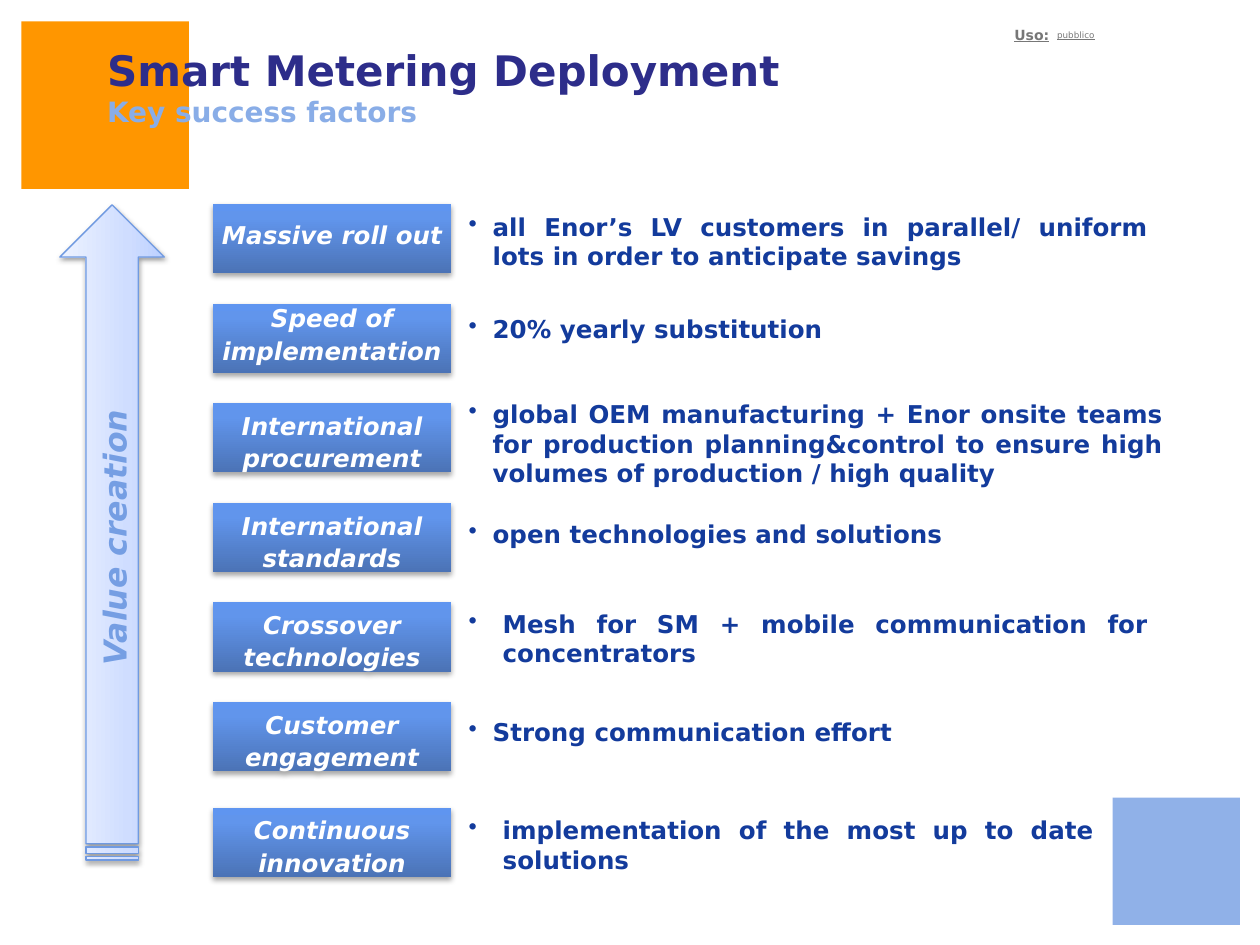
from lxml import etree
from pptx import Presentation
from pptx.dml.color import RGBColor
from pptx.enum import shapes, text
from pptx.oxml import ns
from pptx.util import Inches, Pt

FONT = "DejaVu Sans"
BOX_STOPS = [(0, "4B73B6"), (80, "6195EC"), (100, "5F95F0")]
ARROW_STOPS = [(0, "BCD0FF"), (35, "CFDDFF"), (100, "EDF2FF")]
LABEL_INSETS = (0.04, 0.04, 0.04, 0)
RAISED_INSETS = (0.04, 0, 0.04, 0.09)
BULLET_INSETS = (0.06, 0.06, 0.1, 0.06)
HEADER_INSETS = (0.11, 0.05, 0.11, 0.05)

# label, label insets, bullet text, bullet top, bullet width, hanging indent
FACTORS = [
    ("Massive roll out", RAISED_INSETS,
     "all Enor’s LV customers in parallel/ uniform lots in order to anticipate savings",
     1.62, 5.55, 0.19),
    ("Speed of implementation", RAISED_INSETS,
     "20% yearly substitution", 2.43, 5.55, 0.19),
    ("International procurement", LABEL_INSETS,
     "global OEM manufacturing + Enor onsite teams for production "
     "planning&control to ensure high volumes of production / high quality",
     3.11, 5.67, 0.19),
    ("International standards", LABEL_INSETS,
     "open technologies and solutions", 4.06, 5.55, 0.19),
    ("Crossover technologies", LABEL_INSETS,
     "Mesh for SM + mobile communication for concentrators", 4.77, 5.55, 0.27),
    ("Customer engagement", LABEL_INSETS,
     "Strong communication effort", 5.63, 5.55, 0.19),
    ("Continuous innovation", LABEL_INSETS,
     "implementation of the most up to date solutions", 6.41, 5.12, 0.27),
]
FIRST_TOP, PITCH, LAST_TOP = 1.62, 0.79, 6.41


def color(value):
    return RGBColor.from_string(value)


def sub(parent, tag, **attrs):
    return etree.SubElement(parent, ns.qn(tag), {k: str(v) for k, v in attrs.items()})


def setup_frame(sp, insets, anchor):
    tf = sp.text_frame
    tf.word_wrap = True
    tf.vertical_anchor = anchor
    (tf.margin_left, tf.margin_top,
     tf.margin_right, tf.margin_bottom) = map(Inches, insets)
    return tf


def write(p, content, size, fill, bold=True, italic=False, underline=False,
          align=None, spacing=None, hang=None):
    """Fill a paragraph; hang is the hanging indent of a bullet in inches."""
    if hang:
        pPr = p._p.get_or_add_pPr()
        pPr.set("marL", str(Inches(hang)))
        pPr.set("indent", str(-Inches(hang)))
        sub(pPr, "a:buChar", char="•")
    p.alignment = align
    if spacing:
        p.line_spacing = spacing
    r = p.add_run()
    r.text = content
    f = r.font
    f.name, f.size, f.color.rgb = FONT, Pt(size), color(fill)
    f.bold, f.italic, f.underline = bold, italic, underline


def add_text(s, at, insets, anchor=text.MSO_ANCHOR.TOP):
    return setup_frame(s.shapes.add_textbox(*map(Inches, at)), insets, anchor)


def add_shape(s, kind, at, fill=None, line=None):
    sp = s.shapes.add_shape(kind, *map(Inches, at))
    sp.shadow.inherit = False
    if fill:
        sp.fill.solid()
        sp.fill.fore_color.rgb = color(fill)
    if line:
        sp.line.color.rgb = color(line)
        sp.line.width = Pt(0.75)
    else:
        sp.line.fill.background()
    return sp


def add_gradient(sp, stops):
    """Run the colour stops from the bottom of the shape to its top."""
    sp.fill.gradient()
    sp.fill.gradient_angle = 90
    gs_list = sp._element.spPr.find(".//" + ns.qn("a:gsLst"))
    for old in list(gs_list):
        gs_list.remove(old)
    for pos, value in stops:
        sub(sub(gs_list, "a:gs", pos=pos * 1000), "a:srgbClr", val=value)


def add_shadow(sp, alpha, distance):
    effects = sp._element.spPr.find(ns.qn("a:effectLst"))
    shadow = sub(effects, "a:outerShdw", blurRad=Pt(3.1), dist=Pt(distance),
                 dir=5400000, rotWithShape=0)
    sub(sub(shadow, "a:srgbClr", val="000000"), "a:alpha", val=alpha * 1000)


def add_header(s):
    rect = shapes.MSO_SHAPE.RECTANGLE
    add_shape(s, rect, (0.17, 0.17, 1.33, 1.33), "FF9600")
    corner = add_shape(s, rect, (8.83, 6.33, 1.01, 1.01), "759EE3")
    sub(corner._element.spPr.find(".//" + ns.qn("a:srgbClr")), "a:alpha", val=80000)

    tf = add_text(s, (7.94, 0.16, 1.53, 0.16), HEADER_INSETS)
    write(tf.paragraphs[0], "Uso:", 8, "777777", underline=True)
    tf = add_text(s, (8.28, 0.21, 1.58, 0.14), HEADER_INSETS)
    write(tf.paragraphs[0], "pubblico", 5, "777777", bold=False,
          underline=True, spacing=0.7)

    tf = add_text(s, (0.8, 0, 8.45, 1.07), (0.05, 0.05, 0.1, 0.05),
                  text.MSO_ANCHOR.BOTTOM)
    write(tf.paragraphs[0], "Smart Metering Deployment", 24, "2D2D8A")
    write(tf.add_paragraph(), "Key success factors", 16, "89ADE7")


def add_arrow(s):
    sp = add_shape(s, shapes.MSO_SHAPE.STRIPED_RIGHT_ARROW,
                   (-1.71, 3.81, 5.2, 0.83), line="709AE1")
    sp.rotation = 270
    add_gradient(sp, ARROW_STOPS)
    add_shadow(sp, 38, 1.6)
    tf = setup_frame(sp, (0.1, 0.05, 0.1, 0.05), text.MSO_ANCHOR.MIDDLE)
    write(tf.paragraphs[0], "Value creation", 18, "759EE3", italic=True,
          align=text.PP_ALIGN.CENTER, spacing=1.1)


def add_factor(s, top, label, insets, bullet, bullet_top, width, hang):
    sp = add_shape(s, shapes.MSO_SHAPE.RECTANGLE, (1.69, top, 1.89, 0.55))
    add_gradient(sp, BOX_STOPS)
    add_shadow(sp, 35, 1.8)
    tf = setup_frame(sp, insets, text.MSO_ANCHOR.MIDDLE)
    write(tf.paragraphs[0], label, 14, "FFFFFF", italic=True,
          align=text.PP_ALIGN.CENTER, spacing=1.1)
    tf = add_text(s, (3.66, bullet_top, width, 0.51), BULLET_INSETS)
    write(tf.paragraphs[0], bullet, 14, "133B9C",
          align=text.PP_ALIGN.JUSTIFY, hang=hang)


def main():
    prs = Presentation()
    prs.slide_width, prs.slide_height = Inches(10), Inches(7.5)
    s = prs.slides.add_slide(prs.slide_layouts[6])
    add_header(s)
    add_arrow(s)
    for i, factor in enumerate(FACTORS):
        is_last = i == len(FACTORS) - 1
        add_factor(s, LAST_TOP if is_last else FIRST_TOP + i * PITCH, *factor)
    prs.save("out.pptx")


if __name__ == "__main__":
    main()
